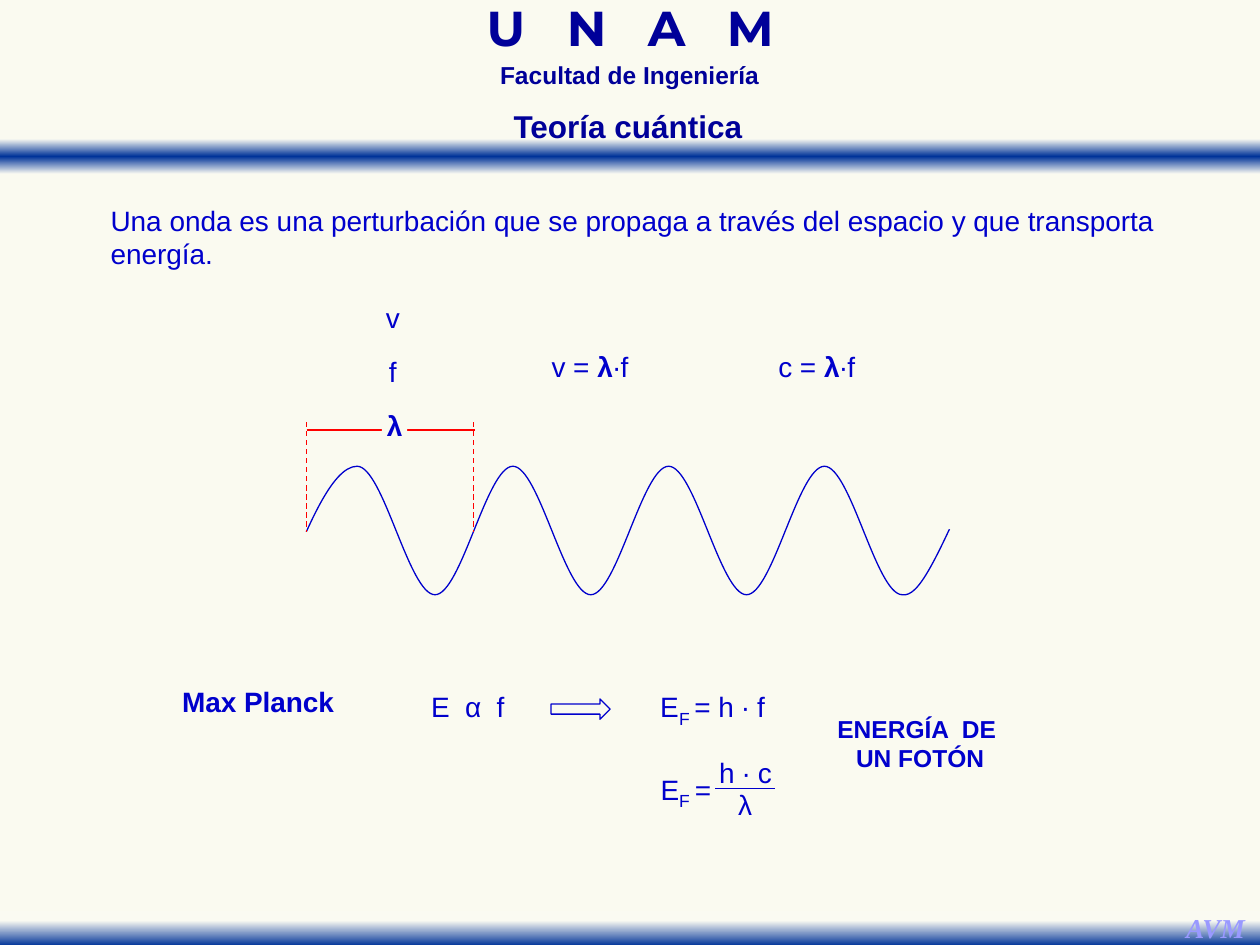
from lxml import etree
from pptx import Presentation
from pptx.dml.color import RGBColor
from pptx.enum.dml import MSO_LINE
from pptx.enum.shapes import MSO_CONNECTOR, MSO_SHAPE
from pptx.enum.text import PP_ALIGN
from pptx.oxml import parse_xml
from pptx.oxml.ns import nsdecls, qn
from pptx.util import Cm, Pt

PAPER = RGBColor(0xFA, 0xFA, 0xF0)
BAND_LIGHT = RGBColor(0xFA, 0xFA, 0xF2)
BAND_BLUE = RGBColor(0x00, 0x33, 0x99)
NAVY = RGBColor(0x00, 0x00, 0x99)
BLUE = RGBColor(0x00, 0x00, 0xCC)
LILAC = RGBColor(0x99, 0x99, 0xFF)
RED = RGBColor(0xFF, 0x00, 0x00)

WIDTH, HEIGHT = 25.4, 19.05
CENTER = PP_ALIGN.CENTER
LINE_HEIGHT = 0.89

# Bands: top, gradient stops
BANDS = [
    (2.8, [(0, BAND_LIGHT), (50, BAND_BLUE), (100, BAND_LIGHT)]),
    (18.36, [(28, BAND_LIGHT), (100, BAND_BLUE)]),
]

# Headings: text, box, style
HEADINGS = [
    ("U   N   A   M", (7.74, 0.15, 9.93, 1.09),
     dict(size=28, font="Montserrat", color=NAVY, bold=True, spacing=0.7)),
    ("Facultad de Ingeniería", (8.16, 1.24, 9.07, 0.69),
     dict(size=14, color=NAVY, bold=True, spacing=0.7)),
    ("AVM", (23.64, 18.24, 1.73, 0.94),
     dict(size=15.6, font="Times New Roman", color=LILAC, bold=True,
          italic=True, wrap=False)),
    ("Teoría cuántica", (7.16, 2.03, 11, 1.02),
     dict(size=18, color=NAVY, bold=True)),
]
DEFINITION = ("Una onda es una perturbación que se propaga a través del "
              "espacio y que transporta energía.")

# One-line labels: text, left, top, width, bold
LABELS = [
    ("f", 7.74, 7.05, 0.36, False),
    ("v", 7.68, 5.95, 0.48, False),
    ("v = λ∙f", 11.02, 6.94, 2.08, False),
    ("c = λ∙f", 15.59, 6.94, 2.08, False),
    ("Max Planck", 3.57, 13.7, 3.3, True),
    ("E  α  f", 8.59, 13.8, 1.73, False),
    ("E  = h ∙ f", 13.21, 13.8, 2.36, False),
    ("E  =", 13.22, 15.47, 1.24, False),
    ("h ∙ c", 14.4, 15.14, 1.3, False),
    ("λ", 14.78, 15.77, 0.51, False),
]
SUBSCRIPT_TOPS = [14.15, 15.8]

# Wave geometry
WAVE_START, FIRST_CREST, HALF_WAVE, HALVES = 5.65, 7.2, 1.57, 7
CREST, TROUGH = 9.4, 11.99
MIDDLE = (CREST + TROUGH) / 2
WAVE_MASKS = [(5.44, 10.72), (19.02, 8.89)]

presentation = Presentation()
presentation.slide_width, presentation.slide_height = Cm(WIDTH), Cm(HEIGHT)
slide = presentation.slides.add_slide(presentation.slide_layouts[6])
slide.background.fill.solid()
slide.background.fill.fore_color.rgb = PAPER
shapes = slide.shapes


def add_text(text, box, size=16, font="Arial", color=BLUE, bold=False,
             italic=False, spacing=None, wrap=True, align=CENTER, inset=None):
    text_box = shapes.add_textbox(*map(Cm, box))
    frame = text_box.text_frame
    frame.word_wrap = wrap
    if inset is not None:
        frame.margin_left = frame.margin_right = Cm(inset)
        frame.margin_top = frame.margin_bottom = Cm(inset)
    paragraph = frame.paragraphs[0]
    paragraph.alignment = align
    paragraph.line_spacing = spacing
    # In a formula the wavelength symbol stands out in bold
    head, symbol, tail = text.partition("λ")
    for part in filter(None, (head, symbol, tail)):
        run = paragraph.add_run()
        run.text = part
        run.font.name, run.font.size = font, Pt(size)
        run.font.color.rgb = color
        run.font.bold = bold or (part == "λ" and bool(tail))
        run.font.italic = italic
    return text_box


def add_label(text, left, top, width, bold):
    return add_text(text, (left, top, width, LINE_HEIGHT), bold=bold,
                    wrap="∙f" in text, align=PP_ALIGN.JUSTIFY, inset=0.1)


def add_block(kind, box):
    block = shapes.add_shape(kind, *map(Cm, box))
    block.shadow.inherit = False
    block.line.fill.background()
    return block


def fill_paper(shape):
    shape.fill.solid()
    shape.fill.fore_color.rgb = PAPER


def add_line(start, end, color, width=0.75, dash=None):
    line = shapes.add_connector(MSO_CONNECTOR.STRAIGHT, *map(Cm, start + end))
    line.line.color.rgb, line.line.width = color, Pt(width)
    if dash:
        line.line.dash_style = dash
    etree.SubElement(line._element.spPr, qn("a:effectLst"))


def add_band(top, stops):
    band = add_block(MSO_SHAPE.RECTANGLE, (0, top, WIDTH, 0.71))
    stop_xml = "".join(
        f'<a:gs pos="{position * 1000}"><a:srgbClr val="{color}"/></a:gs>'
        for position, color in stops)
    gradient = parse_xml(
        f'<a:gradFill {nsdecls("a")} rotWithShape="1"><a:gsLst>{stop_xml}'
        '</a:gsLst><a:lin ang="5400000" scaled="0"/></a:gradFill>')
    band._element.spPr.find(qn("a:prstGeom")).addnext(gradient)


def wave_curves():
    """Two control points and the end point of each piece of the wave."""
    third = (FIRST_CREST - WAVE_START) / 3
    yield ((WAVE_START + third, MIDDLE), (FIRST_CREST - third, CREST),
           (FIRST_CREST, CREST))
    for half in range(HALVES):
        x = FIRST_CREST + half * HALF_WAVE
        y, next_y = (CREST, TROUGH) if half % 2 == 0 else (TROUGH, CREST)
        yield ((x + HALF_WAVE / 3, y), (x + HALF_WAVE * 2 / 3, next_y),
               (x + HALF_WAVE, next_y))
    yield (18.52, 12.04), (18.85, 11.35), (19.71, CREST)


def add_wave():
    curves = list(wave_curves())
    builder = shapes.build_freeform(Cm(WAVE_START), Cm(TROUGH))
    builder.add_line_segments([tuple(map(Cm, curve[-1])) for curve in curves],
                              close=False)
    wave = builder.convert_to_shape()
    # Bend each straight segment into a cubic curve
    for segment, curve in zip(list(wave._element.iter(qn("a:lnTo"))), curves):
        segment.tag = qn("a:cubicBezTo")
        segment.clear()
        for x, y in curve:
            etree.SubElement(segment, qn("a:pt"), x=str(Cm(x) - wave.left),
                             y=str(Cm(y) - wave.top))
    wave.shadow.inherit = False
    wave.fill.background()
    wave.line.color.rgb, wave.line.width = BLUE, Pt(0.75)


# Bands and headings
for band in BANDS:
    add_band(*band)
for text, box, style in HEADINGS:
    add_text(text, box, **style)
add_text(DEFINITION, (1.98, 3.97, 21.54, 1.63), align=PP_ALIGN.JUSTIFY)

# Wave, trimmed at both ends
add_wave()
for left, top in WAVE_MASKS:
    fill_paper(add_block(MSO_SHAPE.RECTANGLE, (left, top, 0.99, 1.78)))

# Wavelength measure
for x in (6.18, 9.55):
    add_line((x, 8.51), (x, 10.72), RED, dash=MSO_LINE.DASH)
add_line((6.18, 8.67), (9.58, 8.67), RED, 1.5)
fill_paper(add_label("λ", 7.7, 8.13, 0.51, True))

# Formulas
for label in LABELS:
    add_label(*label)
for top in SUBSCRIPT_TOPS:
    add_text("F", (13.43, top, 0.74, 0.69), size=10, wrap=False)
add_line((14.42, 15.9), (15.62, 15.9), BLUE)
arrow = add_block(MSO_SHAPE.RIGHT_ARROW, (11.11, 14.09, 1.19, 0.41))
arrow.fill.background()
arrow.line.color.rgb, arrow.line.width = BLUE, Pt(0.75)
add_text("ENERGÍA  DE  UN FOTÓN", (16.67, 14.29, 3.76, 1.45), size=14,
         bold=True, inset=0.1)

presentation.save("out.pptx")
